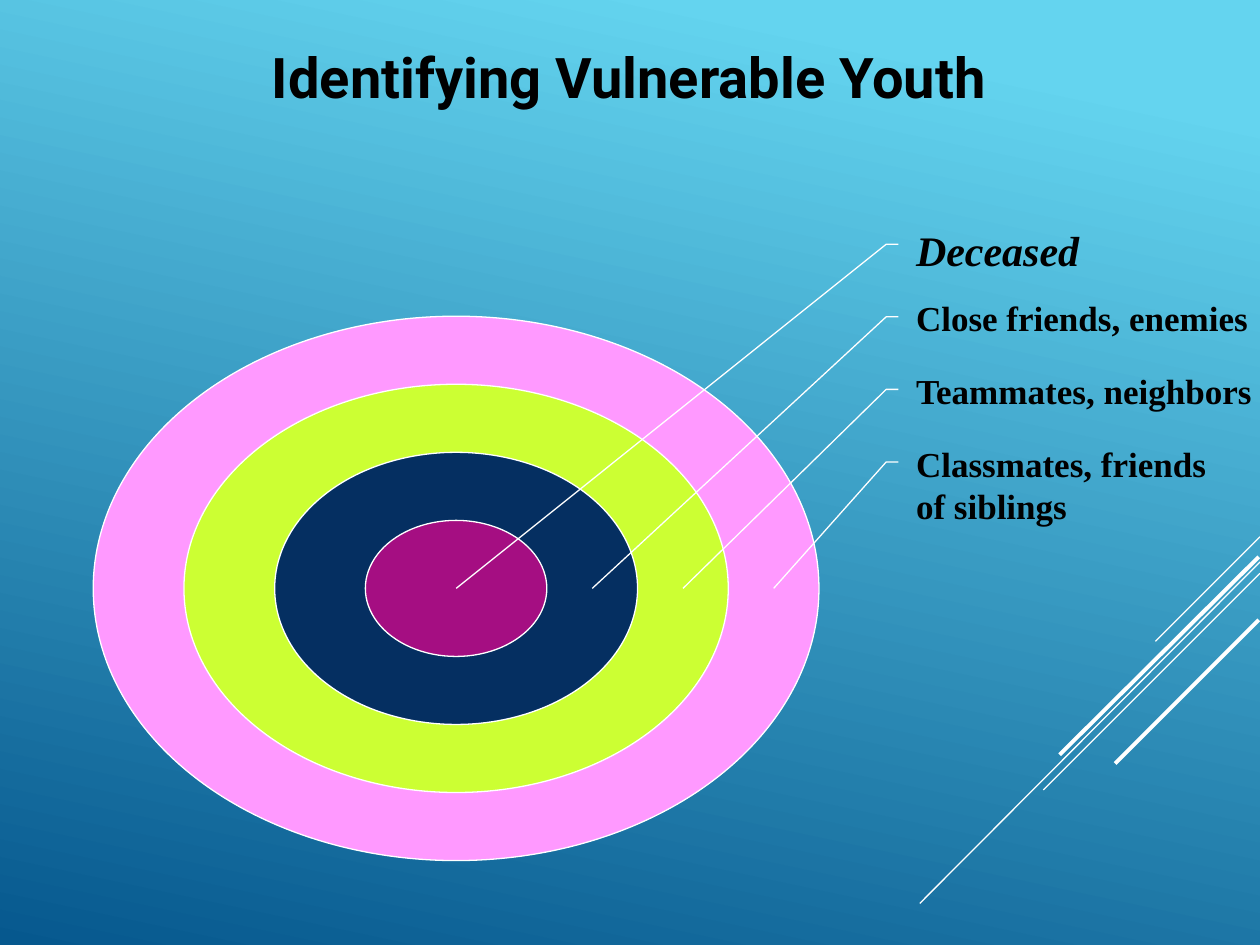
from dataclasses import dataclass

from lxml import etree
from pptx import Presentation
from pptx.dml.color import RGBColor
from pptx.enum.shapes import MSO_CONNECTOR, MSO_SHAPE
from pptx.enum.text import MSO_ANCHOR, PP_ALIGN
from pptx.oxml.ns import qn
from pptx.util import Inches, Pt

STRAIGHT = MSO_CONNECTOR.STRAIGHT
OVAL = MSO_SHAPE.OVAL
CALLOUT = MSO_SHAPE.LINE_CALLOUT_2_NO_BORDER
TOP = MSO_ANCHOR.TOP
LEFT, CENTER = PP_ALIGN.LEFT, PP_ALIGN.CENTER


@dataclass(frozen=True)
class Theme:
    sky: str = "64D4EF"
    deep: str = "06588E"
    line: str = "FFFFFF"
    text: str = "000000"
    title_font: str = "Roboto"
    label_font: str = "Times New Roman"
    title_size: int = 32
    core_size: int = 24
    label_size: int = 20
    thin: float = 0.75
    thick: float = 2.25


THEME = Theme()
TITLE = "Identifying Vulnerable Youth"

# From the centre outwards: fill, label lines
RINGS = [
    ("A50E82", ["Deceased"]),
    ("052F61", ["Close friends, enemies"]),
    ("CCFF33", ["Teammates, neighbors"]),
    ("FF99FF", ["Classmates, friends", "of siblings"]),
]

# Corner decoration: start, end, width
STREAKS = [
    ((10, 4.26), (9.17, 5.09), THEME.thin),
    ((10, 4.46), (7.3, 7.17), THEME.thin),
    ((10, 4.55), (8.28, 6.27), THEME.thin),
    ((9.99, 4.42), (8.41, 5.99), THEME.thick),
    ((9.99, 4.92), (8.85, 6.06), THEME.thick),
]

CENTER_X, CENTER_Y = 3.62, 4.67
STEP_X, STEP_Y = 0.72, 0.54          # growth of the radii per ring
LABEL_X, LABEL_Y = 7.27, 1.78
LABEL_W, LABEL_H = 1.15, 0.576
ELBOW_Y, ELBOW_NEAR, ELBOW_FAR = 0.275, -0.122, -0.206


def rgb(value):
    return RGBColor.from_string(value)


def set_line(sp, width=THEME.thin):
    sp.line.color.rgb = rgb(THEME.line)
    sp.line.width = Pt(width)


def write(tf, lines, font, size, align=LEFT, italic=False, inset=0, wrap=False):
    tf.word_wrap = wrap
    tf.vertical_anchor = TOP
    tf.margin_left = tf.margin_right = Inches(2 * inset)
    tf.margin_top = tf.margin_bottom = Inches(inset)
    for i, line in enumerate(lines):
        p = tf.paragraphs[0] if i == 0 else tf.add_paragraph()
        p.alignment = align
        r = p.add_run()
        r.text = line
        r.font.name, r.font.size = font, Pt(size)
        r.font.bold, r.font.italic = True, italic
        r.font.color.rgb = rgb(THEME.text)


def paint_background(slide):
    fill = slide.background.fill
    fill.gradient()
    fill.gradient_angle = 258
    for stop, (position, color) in zip(fill.gradient_stops, [(0.1, THEME.sky), (1, THEME.deep)]):
        stop.position = position
        stop.color.rgb = rgb(color)


def add_streak(slide, start, end, width):
    line = slide.shapes.add_connector(STRAIGHT, *map(Inches, start + end))
    set_line(line, width)
    etree.SubElement(line._element.spPr, qn("a:effectLst"))


def add_disc(slide, level, color):
    rx, ry = STEP_X * level, STEP_Y * level
    sp = slide.shapes.add_shape(OVAL, Inches(CENTER_X - rx), Inches(CENTER_Y - ry),
                                Inches(2 * rx), Inches(2 * ry))
    sp.shadow.inherit = False
    sp.fill.solid()
    sp.fill.fore_color.rgb = rgb(color)
    set_line(sp)


def add_label(slide, level, lines):
    """Add a label whose leader ends in the middle of its ring."""
    core = level == 1
    top = LABEL_Y + (level - 1) * LABEL_H
    target_x = CENTER_X if core else CENTER_X + STEP_X * (level - 0.5)
    sp = slide.shapes.add_shape(CALLOUT, Inches(LABEL_X), Inches(top),
                                Inches(LABEL_W), Inches(LABEL_H))
    points = [ELBOW_Y, ELBOW_NEAR, ELBOW_Y, ELBOW_FAR,
              (CENTER_Y - top) / LABEL_H, (target_x - LABEL_X) / LABEL_W]
    for i, value in enumerate(points):
        sp.adjustments[i] = value
    sp.shadow.inherit = False
    sp.fill.background()
    set_line(sp)
    write(sp.text_frame, lines, THEME.label_font,
          THEME.core_size if core else THEME.label_size, italic=core)


def main():
    prs = Presentation()
    prs.slide_width, prs.slide_height = Inches(10), Inches(7.5)
    slide = prs.slides.add_slide(prs.slide_layouts[5])
    paint_background(slide)

    title = slide.shapes.title
    title.left, title.top, title.width, title.height = map(Inches, (0.33, 0.29, 9.33, 0.64))
    write(title.text_frame, [TITLE], THEME.title_font, THEME.title_size,
          align=CENTER, inset=0.05, wrap=True)

    for streak in STREAKS:
        add_streak(slide, *streak)
    levels = list(enumerate(RINGS, start=1))
    for level, (color, lines) in reversed(levels):
        add_disc(slide, level, color)
        add_label(slide, level, lines)

    prs.save("out.pptx")


if __name__ == "__main__":
    main()
